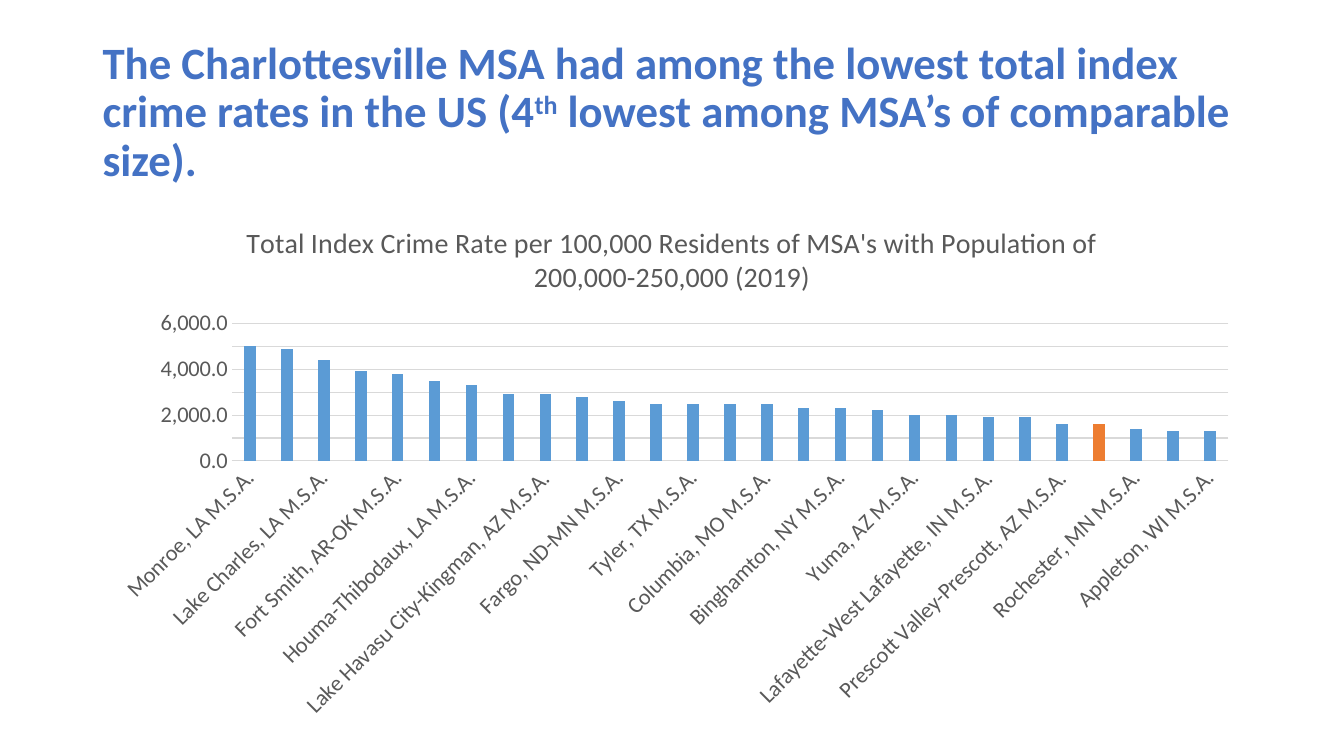
"""Build the slide that ranks crime rates of comparable metropolitan areas."""
from lxml.etree import SubElement
from pptx import Presentation
from pptx.chart.data import CategoryChartData
from pptx.dml.color import RGBColor
from pptx.enum.chart import XL_CHART_TYPE, XL_TICK_MARK
from pptx.enum.text import MSO_ANCHOR, MSO_AUTO_SIZE, PP_ALIGN
from pptx.oxml.ns import qn
from pptx.util import Cm, Pt

TITLE_PARTS = [
    ("The Charlottesville MSA had among the lowest total index crime rates in the US (4", 0),
    ("th", 30000),
    (" lowest among MSA’s of comparable size).", 0),
]
CHART_TITLE = ("Total Index Crime Rate per 100,000 Residents of MSA's "
               "with Population of 200,000-250,000 (2019)")
HIGHLIGHTED_AREA = "Charlottesville, VA M.S.A."
CRIME_RATES = {
    "Monroe, LA M.S.A.": 5000,
    "Florence, SC M.S.A.": 4900,
    "Lake Charles, LA M.S.A.": 4400,
    "Macon-Bibb County, GA M.S.A.3": 3900,
    "Fort Smith, AR-OK M.S.A.": 3800,
    "Springfield, IL M.S.A.": 3500,
    "Houma-Thibodaux, LA M.S.A.": 3300,
    "Las Cruces, NM M.S.A.": 2900,
    "Lake Havasu City-Kingman, AZ M.S.A.": 2900,
    "Chico, CA M.S.A.": 2800,
    "Fargo, ND-MN M.S.A.": 2600,
    "Johnson City, TN M.S.A.": 2500,
    "Tyler, TX M.S.A.": 2500,
    "Champaign-Urbana, IL M.S.A.": 2500,
    "Columbia, MO M.S.A.": 2500,
    "Bellingham, WA M.S.A": 2300,
    "Binghamton, NY M.S.A.": 2300,
    "St. Cloud, MN M.S.A.": 2200,
    "Yuma, AZ M.S.A.": 2000,
    "Hilton Head Island-Bluffton, SC M.S.A.": 2000,
    "Lafayette-West Lafayette, IN M.S.A.": 1900,
    "Burlington-South Burlington, VT M.S.A.": 1900,
    "Prescott Valley-Prescott, AZ M.S.A.": 1600,
    HIGHLIGHTED_AREA: 1600,
    "Rochester, MN M.S.A.": 1400,
    "Barnstable Town, MA M.S.A.": 1300,
    "Appleton, WI M.S.A.": 1300,
}
TITLE_FORMAT = {"name": "Calibri", "size": Pt(32), "bold": True}
CHART_TITLE_FORMAT = {"name": "Calibri", "size": Pt(20), "bold": False}
LABEL_FORMAT = {"name": "Calibri", "size": Pt(16), "bold": False}
VALUE_SCALE = {"minimum_scale": 0, "maximum_scale": 6000, "major_unit": 1000}
TITLE_BOX = {"left": Cm(2.33), "top": Cm(1.01), "width": Cm(29.21), "height": Cm(3.68)}
CHART_BOX = (Cm(2.33), Cm(5.08), Cm(29.21), Cm(13.34))
PLOT_LAYOUT = {"layoutTarget": "inner", "xMode": "edge", "yMode": "edge",
               "x": 0.12, "y": 0.23, "w": 0.86, "h": 0.26}


def color(hex_value):
    return RGBColor.from_string(hex_value)


def set_attributes(target, values):
    for name, value in values.items():
        setattr(target, name, value)


def format_font(font, values, hex_value):
    set_attributes(font, values)
    font.color.rgb = color(hex_value)


def format_line(line, hex_value):
    line.color.rgb = color(hex_value)
    line.width = Pt(0.75)


def add_title(slide):
    title = slide.shapes.title
    set_attributes(title, TITLE_BOX)
    frame = title.text_frame
    set_attributes(frame, {"word_wrap": True, "auto_size": MSO_AUTO_SIZE.NONE,
                           "vertical_anchor": MSO_ANCHOR.MIDDLE})
    paragraph = frame.paragraphs[0]
    set_attributes(paragraph, {"alignment": PP_ALIGN.LEFT, "line_spacing": 0.9})
    for text, baseline in TITLE_PARTS:
        run = paragraph.add_run()
        run.text = text
        format_font(run.font, TITLE_FORMAT, "4472C4")
        if baseline:
            run._r.get_or_add_rPr().set("baseline", str(baseline))


def place_plot(chart):
    plot_area = chart._chartSpace.find(".//" + qn("c:plotArea"))
    for layout in plot_area.findall(qn("c:layout")):
        plot_area.remove(layout)
    layout = SubElement(plot_area, qn("c:layout"))
    plot_area.insert(0, layout)
    manual_layout = SubElement(layout, qn("c:manualLayout"))
    for name, value in PLOT_LAYOUT.items():
        SubElement(manual_layout, qn("c:" + name)).set("val", str(value))


def add_rate_chart(slide):
    data = CategoryChartData(number_format="#,##0.0")
    data.categories = list(CRIME_RATES)
    data.add_series("Series 1", list(CRIME_RATES.values()))
    chart = slide.shapes.add_chart(XL_CHART_TYPE.COLUMN_CLUSTERED, *CHART_BOX, data).chart
    format_font(chart.font, LABEL_FORMAT, "000000")
    chart.has_legend = False
    chart.chart_title.include_in_layout = False
    paragraph = chart.chart_title.text_frame.paragraphs[0]
    run = paragraph.add_run()
    run.text = CHART_TITLE
    format_font(run.font, CHART_TITLE_FORMAT, "595959")

    plot = chart.plots[0]
    set_attributes(plot, {"gap_width": 219, "overlap": -27, "vary_by_categories": False})
    series = plot.series[0]
    highlighted_point = series.points[list(CRIME_RATES).index(HIGHLIGHTED_AREA)]
    for bar, hex_value in ((series, "5B9BD5"), (highlighted_point, "ED7D31")):
        bar.format.fill.solid()
        bar.format.fill.fore_color.rgb = color(hex_value)

    category_axis, value_axis = chart.category_axis, chart.value_axis
    for axis in (category_axis, value_axis):
        axis.major_tick_mark = axis.minor_tick_mark = XL_TICK_MARK.NONE
        format_font(axis.tick_labels.font, LABEL_FORMAT, "595959")
    format_line(category_axis.format.line, "D9D9D9")
    labels = category_axis._element.find(qn("c:txPr"))
    labels.find(qn("a:bodyPr")).set("rot", "-2700000")
    set_attributes(value_axis, VALUE_SCALE)
    set_attributes(value_axis.tick_labels,
                   {"number_format": "#,##0.0", "number_format_is_linked": False})
    value_axis.format.line.fill.background()
    format_line(value_axis.major_gridlines.format.line, "D9D9D9")
    place_plot(chart)


def main():
    presentation = Presentation()
    set_attributes(presentation, {"slide_width": Cm(33.87), "slide_height": Cm(19.05)})
    slide = presentation.slides.add_slide(presentation.slide_layouts[5])
    add_title(slide)
    add_rate_chart(slide)
    presentation.save("out.pptx")


if __name__ == "__main__":
    main()
